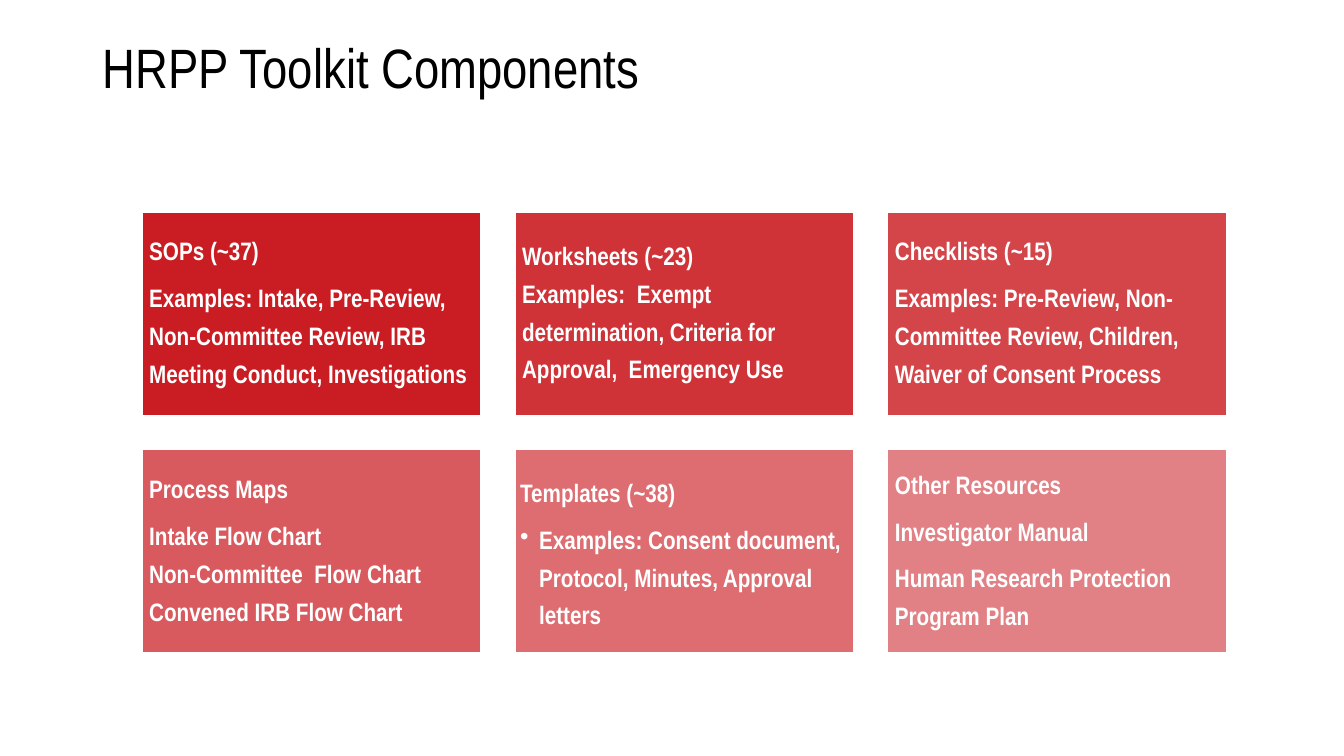
from lxml.etree import SubElement
from pptx import Presentation
from pptx.dml.color import RGBColor
from pptx.enum.shapes import MSO_SHAPE
from pptx.enum.text import MSO_ANCHOR, PP_ALIGN
from pptx.oxml.ns import qn
from pptx.util import Cm, Pt

COLORS = {"red": "C5050C", "white": "FFFFFF", "black": "000000"}
FACE = "Arial Narrow"
HEAD = {"line_spacing": 0.9, "space_after": Pt(6.3)}
TIGHT = {"line_spacing": 0.9, "space_after": Pt(0)}
BODY = {"line_spacing": 1.25, "space_after": Pt(0)}
LOOSE = {"line_spacing": 1.25, "space_after": Pt(6.3)}
BULLET = {"line_spacing": 1.25, "space_after": Pt(0), "level": 1}
EVEN = (0.18, 0.18, 0.18, 0.18)
LOW = (0.13, 0.38, 0.13, 0.18)

CARDS = [
    (EVEN, [
        ("SOPs (~37)", HEAD),
        ("Examples: Intake, Pre-Review, Non-Committee Review, IRB "
         "Meeting Conduct, Investigations", BODY)]),
    (EVEN, [
        ("Worksheets (~23)", TIGHT),
        ("Examples:  Exempt determination, Criteria for Approval,  "
         "Emergency Use", BODY)]),
    (EVEN, [
        ("Checklists (~15)", HEAD),
        ("Examples: Pre-Review, Non-Committee Review, Children, "
         "Waiver of Consent Process", BODY)]),
    (EVEN, [
        ("Process Maps", HEAD),
        ("Intake Flow Chart", BODY),
        ("Non-Committee  Flow Chart", BODY),
        ("Convened IRB Flow Chart", BODY)]),
    (LOW, [
        ("Templates (~38)", HEAD),
        ("Examples: Consent document, Protocol, Minutes, Approval letters",
         BULLET)]),
    (EVEN, [
        ("Other Resources", HEAD),
        ("Investigator Manual", LOOSE),
        ("Human Research Protection Program Plan", BODY)]),
]


def color(name):
    """Return the named colour."""
    return RGBColor.from_string(COLORS[name])


def apply(item, values):
    """Set each format value on the item."""
    for key, value in values.items():
        setattr(item, key, value)


def write(frame, lines, size, bold, ink, inset):
    """Fill a text frame with formatted lines."""
    left, top, right, low = map(Cm, inset)
    apply(frame, {"word_wrap": True, "vertical_anchor": MSO_ANCHOR.MIDDLE,
                  "margin_left": left, "margin_top": top,
                  "margin_right": right, "margin_bottom": low})
    for spot, (text, style) in enumerate(lines):
        para = frame.add_paragraph() if spot else frame.paragraphs[0]
        para.text = text
        if style is BULLET:
            props = para._p.get_or_add_pPr()
            props.set("marL", str(Cm(0.48)))
            props.set("indent", str(-Cm(0.48)))
            SubElement(props, qn("a:buChar"), char="•")
        apply(para, {"alignment": PP_ALIGN.LEFT, **style})
        apply(para.font, {"name": FACE, "size": Pt(size), "bold": bold})
        para.font.color.rgb = color(ink)


def title(slide, left, top, width, height):
    """Place the slide title in its box."""
    box = slide.shapes.add_textbox(Cm(left), Cm(top), Cm(width), Cm(height))
    write(box.text_frame, [("HRPP Toolkit Components", TIGHT)],
          39.6, False, "black", (0.25, 0.13, 0.25, 0.13))


def card(slide, left, top, width, height, alpha, inset, lines):
    """Place one tinted card with its text."""
    shape = slide.shapes.add_shape(
        MSO_SHAPE.RECTANGLE, Cm(left), Cm(top), Cm(width), Cm(height))
    shape.shadow.inherit = False
    shape.fill.solid()
    shape.fill.fore_color.rgb = color("red")
    tint = shape._element.spPr.find(qn("a:solidFill"))[0]
    SubElement(tint, qn("a:alpha"), val=str(alpha * 1000))
    shape.line.color.rgb = color("white")
    shape.line.width = Pt(1)
    write(shape.text_frame, lines, 18, True, "white", inset)


def grid(slide, left, top, width, height, cols=3, rows=2, gap=0.86):
    """Lay out the cards in a grid that fills the box."""
    wide = (width - gap * (cols - 1)) / cols
    high = (height - gap * (rows - 1)) / rows
    for spot, (inset, lines) in enumerate(CARDS):
        row, col = divmod(spot, cols)
        card(slide, left + col * (wide + gap), top + row * (high + gap),
             wide, high, 90 - 8 * spot, inset, lines)


def main():
    """Build and save the slide."""
    deck = Presentation()
    apply(deck, {"slide_width": Cm(33.87), "slide_height": Cm(19.05)})
    slide = deck.slides.add_slide(deck.slide_layouts[6])
    title(slide, 2.34, 0.89, 29.21, 1.78)
    grid(slide, 3.58, 5.34, 27.33, 11.12)
    deck.save("out.pptx")


if __name__ == "__main__":
    main()
